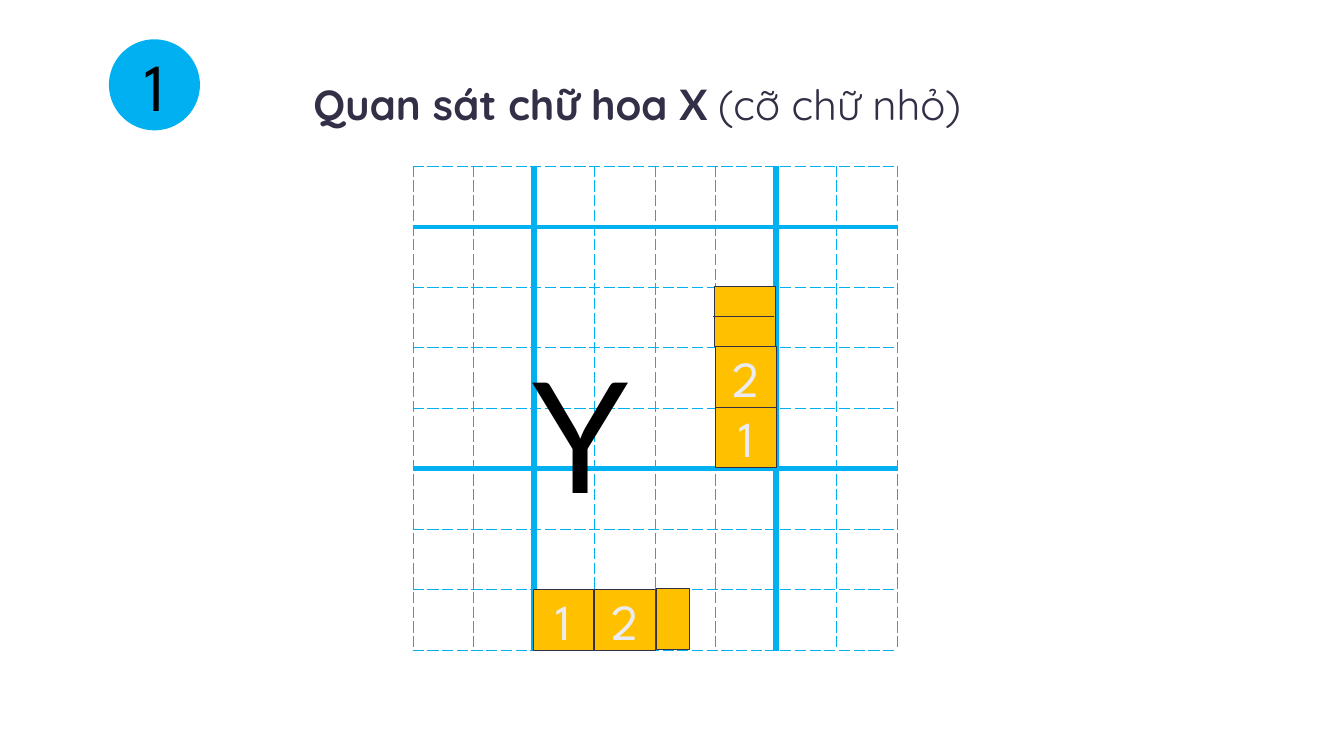
from lxml.etree import SubElement
from pptx import Presentation
from pptx.dml.color import RGBColor
from pptx.enum.shapes import MSO_CONNECTOR, MSO_SHAPE
from pptx.enum.text import MSO_ANCHOR, MSO_AUTO_SIZE, PP_ALIGN
from pptx.oxml import parse_xml
from pptx.oxml.ns import nsdecls, qn
from pptx.util import Pt

BLUE, YELLOW, INK, PALE, BLACK = "00B0F0", "FFC000", "322F46", "EBECF3", "000000"
CELL, COUNT = 43.2, 8
GRID_LEFT, GRID_TOP = 295.2, 118.8
THICK_COLS = {2: 4.5, 6: 4.5}
THICK_ROWS = {1: 3, 5: 4.5}


def rgb(color):
    """Turn a hex string into a colour."""
    return RGBColor.from_string(color)


def set_format(obj, values):
    """Set each named attribute on an object."""
    for name, value in values.items():
        setattr(obj, name, value)


def add_run(p, text, font, size, color, bold=False):
    """Add a formatted run to a paragraph."""
    r = p.add_run()
    r.text = text
    set_format(r.font, {"name": font, "size": Pt(size), "bold": bold})
    r.font.color.rgb = rgb(color)


def add_border(tcPr, index, side, width):
    """Draw one cell border, dashed when it has no heavy width."""
    dash = "solid" if width else "sysDash"
    tcPr.insert(index, parse_xml(
        f'<a:ln{side} {nsdecls("a")} w="{Pt(width or 1)}" cap="flat" cmpd="sng" algn="ctr">'
        f'<a:solidFill><a:srgbClr val="{BLUE}"/></a:solidFill>'
        f'<a:prstDash val="{dash}"/></a:ln{side}>'))


def add_writing_grid(slide):
    """Add the ruled handwriting grid as a table."""
    side = Pt(CELL * COUNT)
    table = slide.shapes.add_table(COUNT, COUNT, Pt(GRID_LEFT), Pt(GRID_TOP), side, side).table
    set_format(table, {"first_row": False, "horz_banding": False})
    for i in range(COUNT):
        table.columns[i].width = table.rows[i].height = Pt(CELL)
    for row in range(COUNT):
        for col in range(COUNT):
            cell = table.cell(row, col)
            cell.fill.background()
            widths = {"L": THICK_COLS.get(col), "R": THICK_COLS.get(col + 1),
                      "T": THICK_ROWS.get(row), "B": THICK_ROWS.get(row + 1)}
            for index, (edge, width) in enumerate(widths.items()):
                add_border(cell._tc.get_or_add_tcPr(), index, edge, width)


def add_letter(slide):
    """Add the large sample letter."""
    tf = slide.shapes.add_textbox(Pt(373), Pt(239), Pt(131), Pt(140.4)).text_frame
    set_format(tf, {"word_wrap": True, "auto_size": MSO_AUTO_SIZE.SHAPE_TO_FIT_TEXT})
    add_run(tf.paragraphs[0], "Y", "Lato", 110, BLACK)


def set_title(slide):
    """Place and format the title."""
    sp = slide.shapes.title
    set_format(sp, {"left": Pt(223.9), "top": Pt(28.8), "width": Pt(607), "height": Pt(90)})
    tf = sp.text_frame
    set_format(tf, {"margin_left": 0, "margin_right": 0, "margin_top": 0, "margin_bottom": 0,
                    "vertical_anchor": MSO_ANCHOR.MIDDLE, "word_wrap": True,
                    "auto_size": MSO_AUTO_SIZE.NONE})
    p = tf.paragraphs[0]
    p.alignment = PP_ALIGN.JUSTIFY
    add_run(p, "Quan sát chữ hoa ", "Quicksand", 30, INK, True)
    add_run(p, "X ", "Lato", 30, INK, True)
    add_run(p, "(cỡ chữ nhỏ)", "Quicksand", 30, INK)


def add_block(slide, kind, box, fill, text="", size=36, color=PALE, line=INK):
    """Add a filled shape with an optional centred number."""
    sp = slide.shapes.add_shape(kind, *map(Pt, box))
    sp.shadow.inherit = False
    sp.fill.solid()
    sp.fill.fore_color.rgb = rgb(fill)
    if line:
        sp.line.color.rgb = rgb(line)
        sp.line.width = Pt(0.5)
    else:
        sp.line.fill.background()
    if text:
        tf = sp.text_frame
        tf.vertical_anchor = MSO_ANCHOR.MIDDLE
        p = tf.paragraphs[0]
        p.alignment = PP_ALIGN.CENTER
        add_run(p, text, "League Spartan", size, color)


def add_divider(slide, x, y, width):
    """Add a thin horizontal line."""
    line = slide.shapes.add_connector(MSO_CONNECTOR.STRAIGHT, Pt(x), Pt(y), Pt(x + width), Pt(y))
    line.line.color.rgb = rgb(INK)
    line.line.width = Pt(0.75)
    SubElement(line._element.spPr, qn("a:effectLst"))


def main():
    """Build the slide and save it."""
    prs = Presentation()
    set_format(prs, {"slide_width": Pt(960), "slide_height": Pt(540)})
    slide = prs.slides.add_slide(prs.slide_layouts[5])
    add_writing_grid(slide)
    add_letter(slide)
    set_title(slide)
    add_block(slide, MSO_SHAPE.OVAL, (77.8, 28.1, 65, 65), BLUE, "1", 48, BLACK, None)
    column_left, column_base, row_left, row_top = 511.2, 334.1, 381, 421.2
    for i, number in enumerate("12"):
        add_block(slide, MSO_SHAPE.RECTANGLE,
                  (column_left, column_base - CELL * (i + 1), CELL, CELL), YELLOW, number)
        add_block(slide, MSO_SHAPE.RECTANGLE,
                  (row_left + (CELL + 0.6) * i, row_top, CELL, CELL), YELLOW, number)
    add_block(slide, MSO_SHAPE.RECTANGLE, (510.5, 204.5, CELL, CELL), YELLOW)
    add_divider(slide, 509.4, 226.1, CELL)
    add_block(slide, MSO_SHAPE.RECTANGLE, (468.6, 420.5, 23.8, CELL), YELLOW)
    prs.save("out.pptx")


if __name__ == "__main__":
    main()
